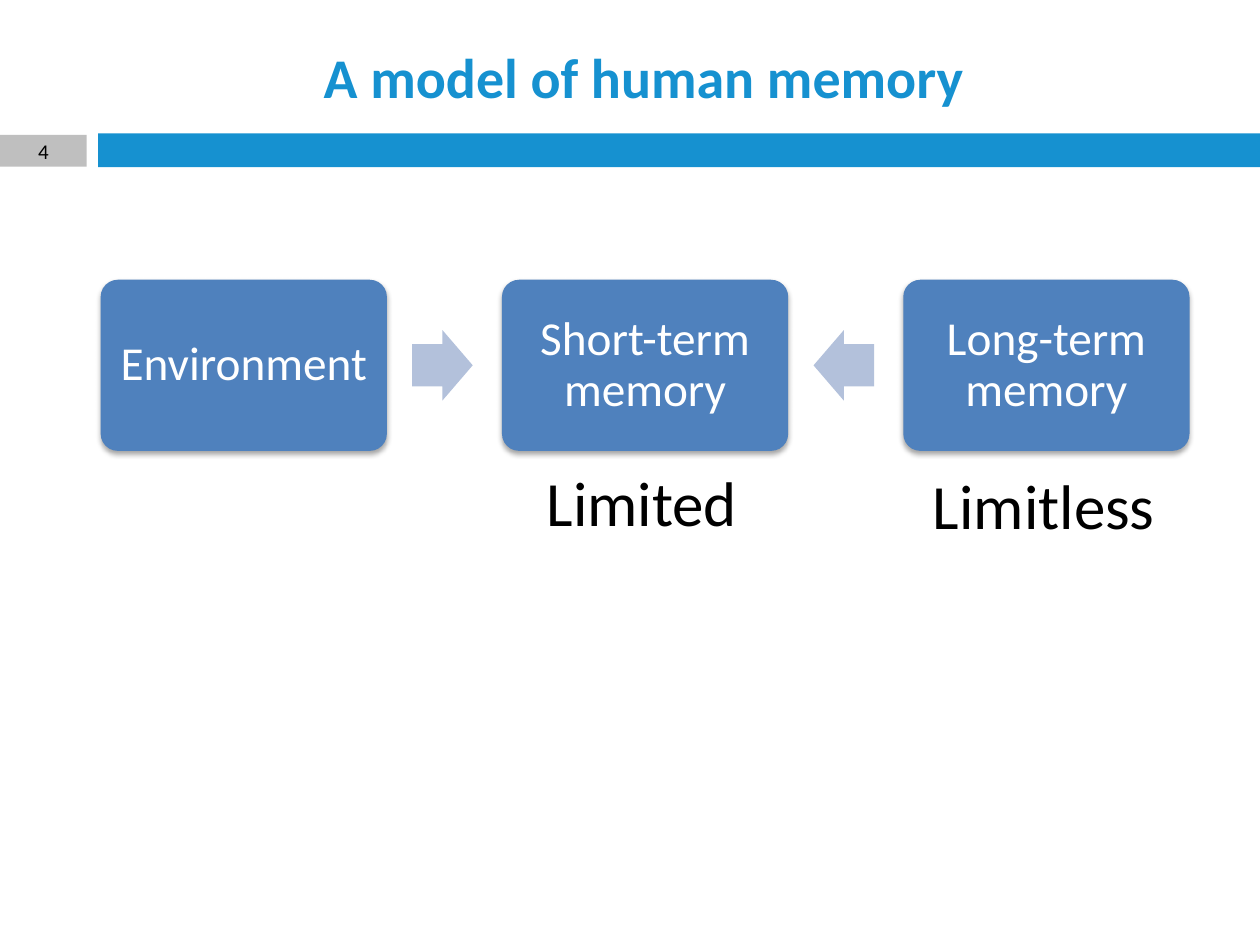
from lxml.etree import SubElement
from pptx import Presentation
from pptx.dml.color import RGBColor
from pptx.enum.shapes import MSO_SHAPE
from pptx.enum.text import MSO_ANCHOR, PP_ALIGN
from pptx.oxml.ns import qn
from pptx.util import Cm, Pt

COLORS = {
    "accent": "1691D0",
    "number": "BFBFBF",
    "box": "4F81BD",
    "arrow": "B3C1DB",
    "black": "000000",
    "white": "FFFFFF",
}
FONT = "Calibri"


def rgb(name):
    return RGBColor.from_string(COLORS[name])


def add_block(s, kind, left, top, width, height, color):
    sp = s.shapes.add_shape(kind, Cm(left), Cm(top), Cm(width), Cm(height))
    sp.shadow.inherit = False
    sp.fill.solid()
    sp.fill.fore_color.rgb = rgb(color)
    sp.line.fill.background()
    return sp


def write(sp, text, size, color, bold=False, anchor=MSO_ANCHOR.MIDDLE):
    tf = sp.text_frame
    tf.word_wrap = True
    tf.vertical_anchor = anchor
    p = tf.paragraphs[0]
    p.text = text
    p.alignment = PP_ALIGN.CENTER
    p.font.name = FONT
    p.font.size = Pt(size)
    p.font.bold = bold
    p.font.color.rgb = rgb(color)
    return tf


def add_label(s, left, top, width, height, text, size, color, **style):
    sp = s.shapes.add_textbox(Cm(left), Cm(top), Cm(width), Cm(height))
    write(sp, text, size, color, **style)


def add_soft_shadow(sp):
    effects = sp._element.spPr.find(qn("a:effectLst"))
    shadow = SubElement(effects, qn("a:outerShdw"), blurRad=str(Pt(3.1)),
                        dist=str(Pt(1.8)), dir="5400000", rotWithShape="0")
    color = SubElement(shadow, qn("a:srgbClr"), val=COLORS["black"])
    SubElement(color, qn("a:alpha"), val="35000")


def add_header(s, left, top, width, title, number):
    bar_left, bar_top = left + 1.98, top + 2.03
    add_block(s, MSO_SHAPE.RECTANGLE, bar_left, bar_top,
              width - 1.98, 0.68, "accent")
    add_label(s, bar_left, top, 22, 1.73, title, 32, "accent", bold=True)
    sp = add_block(s, MSO_SHAPE.RECTANGLE, left, bar_top + 0.03,
                   1.75, 0.64, "number")
    tf = write(sp, number, 12, "black")
    tf.margin_top = tf.margin_bottom = 0


def add_memory_box(s, left, top, width, height, text):
    sp = add_block(s, MSO_SHAPE.ROUNDED_RECTANGLE, left, top,
                   width, height, "box")
    sp.adjustments[0] = 0.1
    add_soft_shadow(sp)
    tf = write(sp, text, 27, "white")
    tf.margin_left = tf.margin_right = Cm(0.27)
    tf.margin_top = tf.margin_bottom = Cm(0.27)
    tf.paragraphs[0].line_spacing = 0.9


def add_memory_flow(s, left, top, width, height):
    names = ["Environment", "Short-term memory", "Long-term memory"]
    box_width, arrow_width, arrow_height = 5.77, 1.22, 1.42
    pitch = (width - box_width) / (len(names) - 1)
    for i, name in enumerate(names):
        add_memory_box(s, left + i * pitch, top, box_width, height, name)
    for i, rotation in enumerate([0, 180]):
        sp = add_block(s, MSO_SHAPE.RIGHT_ARROW, left + i * pitch + 6.28,
                       top + (height - arrow_height) / 2,
                       arrow_width, arrow_height, "arrow")
        sp.adjustments[0] = 0.6
        sp.adjustments[1] = 0.5
        sp.rotation = rotation


def add_capacities(s, left, top):
    for text, dx, dy, width in [("Limited", 0, 0, 4.6),
                                ("Limitless", 6.86, 0.05, 7.09)]:
        add_label(s, left + dx, top + dy, width, 2.57, text, 36, "black",
                  anchor=MSO_ANCHOR.TOP)


def main():
    prs = Presentation()
    prs.slide_width, prs.slide_height = Cm(25.4), Cm(19.05)
    s = prs.slides.add_slide(prs.slide_layouts[6])
    add_header(s, 0, 0.66, 25.4, "A model of human memory", "4")
    add_memory_flow(s, 2.03, 5.64, 21.95, 3.45)
    add_capacities(s, 10.64, 9.22)
    prs.save("out.pptx")


if __name__ == "__main__":
    main()
